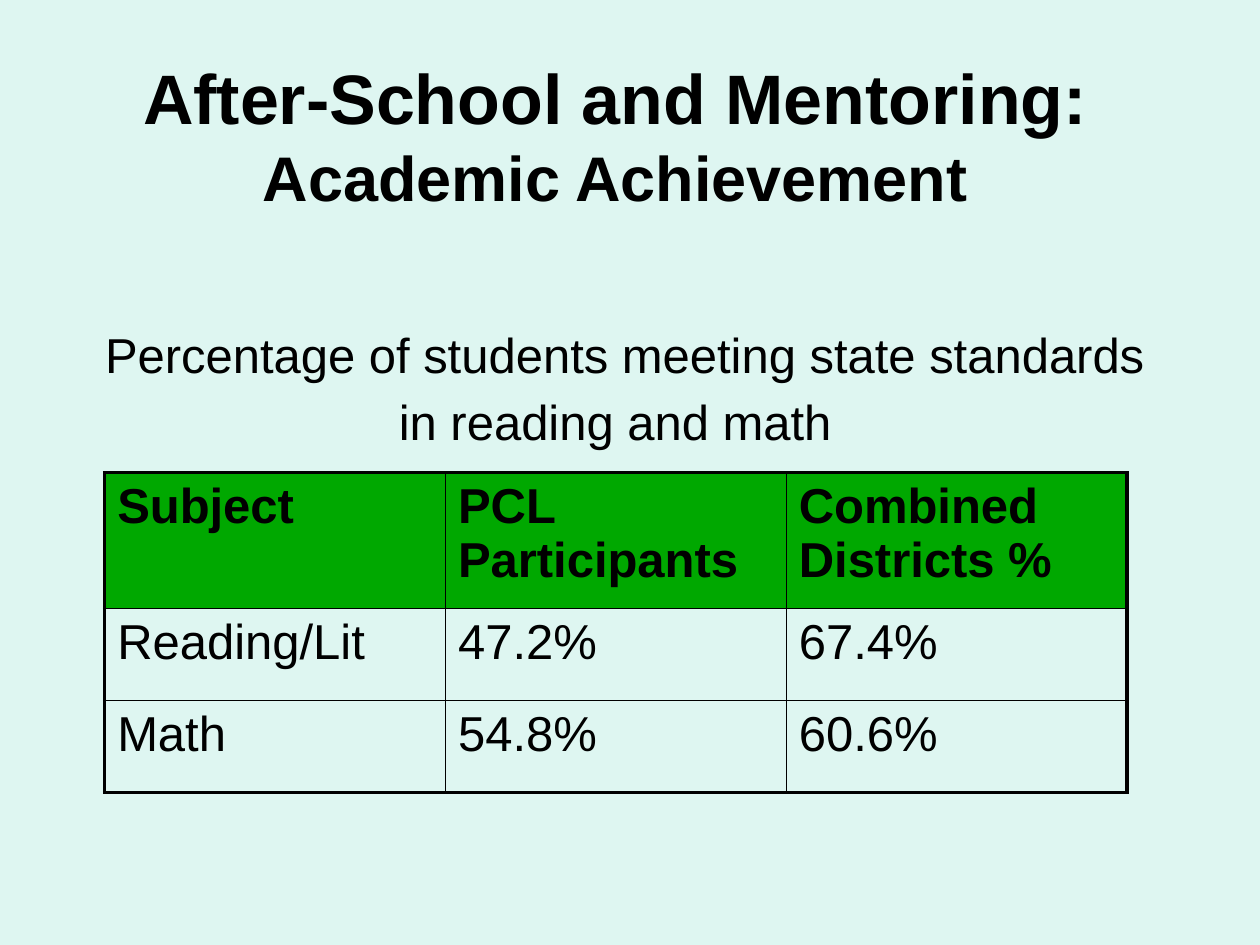
"""Build the slide on academic achievement in after-school and mentoring programs."""
from dataclasses import dataclass

from lxml.etree import SubElement
from pptx import Presentation
from pptx.dml.color import RGBColor
from pptx.enum.text import MSO_ANCHOR, MSO_AUTO_SIZE, PP_ALIGN
from pptx.oxml.ns import qn
from pptx.slide import Slide
from pptx.util import Cm, Pt

BACKGROUND, HEADER_GREEN, BLACK = "DEF6F1", "00A800", "000000"
OUTER_WIDTH, INNER_WIDTH = 2.25, 1


@dataclass(frozen=True)
class TitleLine:
    """One paragraph of the title."""
    text: str
    size: float
    bold: bool = True
    gap: float = 0
    spacing: float = 1.0
    indent: float = 0


TITLE = (
    TitleLine("After-School and Mentoring:", 40),
    TitleLine("Academic Achievement", 36),
    TitleLine("Percentage of students meeting state standards in reading and math",
              28, bold=False, gap=58, spacing=1.14, indent=0.38),
)
RESULTS = (
    ("Subject", "PCL Participants", "Combined Districts %"),
    ("Reading/Lit", "47.2%", "67.4%"),
    ("Math", "54.8%", "60.6%"),
)
ROW_HEIGHTS = (2.74, 1.85, 1.85)
COLUMN_WIDTH = 6.87


def color(code: str) -> RGBColor:
    """Turn a hex string into a colour."""
    return RGBColor.from_string(code)


def write(paragraph, text: str, *, size: float = 28, bold: bool = False,
          align=PP_ALIGN.LEFT, gap: float = 0, spacing: float = 1.0) -> None:
    """Write formatted text into a paragraph."""
    paragraph.alignment = align
    paragraph.space_before = Pt(gap)
    paragraph.line_spacing = spacing
    run = paragraph.add_run()
    run.text = text
    run.font.name = "Arial"
    run.font.size = Pt(size)
    run.font.bold = bold
    run.font.color.rgb = color(BLACK)


def add_border(cell, side: str, width: float) -> None:
    """Add a black border to one side of a cell."""
    line = SubElement(cell._tc.get_or_add_tcPr(), qn(f"a:{side}"), w=str(Pt(width)))
    SubElement(SubElement(line, qn("a:solidFill")), qn("a:srgbClr"), val=BLACK)


def draw_title(slide: Slide) -> None:
    """Fill the title placeholder."""
    title = slide.shapes.title
    title.left, title.top, title.width, title.height = Cm(1.07), Cm(1.07), Cm(22.66), Cm(7.82)
    frame = title.text_frame
    frame.word_wrap = True
    frame.auto_size = MSO_AUTO_SIZE.NONE
    frame.vertical_anchor = MSO_ANCHOR.MIDDLE
    frame.margin_top = Cm(0.35)
    for index, line in enumerate(TITLE):
        paragraph = frame.add_paragraph() if index else frame.paragraphs[0]
        write(paragraph, line.text, size=line.size, bold=line.bold, align=PP_ALIGN.CENTER,
              gap=line.gap, spacing=line.spacing)
        paragraph._p.get_or_add_pPr().set("indent", str(Cm(line.indent)))


def draw_results(slide: Slide) -> None:
    """Draw the table of results with a heavy outer frame."""
    row_count, column_count = len(RESULTS), len(RESULTS[0])
    table = slide.shapes.add_table(row_count, column_count, Cm(2.11), Cm(9.53),
                                   Cm(COLUMN_WIDTH * column_count), Cm(sum(ROW_HEIGHTS))).table
    table.horz_banding = False
    table.first_row = False
    for column in table.columns:
        column.width = Cm(COLUMN_WIDTH)
    for row_index, (row, height) in enumerate(zip(RESULTS, ROW_HEIGHTS)):
        table.rows[row_index].height = Cm(height)
        for column_index, text in enumerate(row):
            cell = table.cell(row_index, column_index)
            write(cell.text_frame.paragraphs[0], text, bold=row_index == 0)
            outer_sides = {
                "lnL": column_index == 0,
                "lnR": column_index == column_count - 1,
                "lnT": row_index == 0,
                "lnB": row_index == row_count - 1,
            }
            for side, is_outer in outer_sides.items():
                add_border(cell, side, OUTER_WIDTH if is_outer else INNER_WIDTH)
            if row_index == 0:
                cell.fill.solid()
                cell.fill.fore_color.rgb = color(HEADER_GREEN)
            else:
                cell.fill.background()


def main() -> None:
    """Build and save the presentation."""
    presentation = Presentation()
    presentation.slide_width, presentation.slide_height = Cm(25.4), Cm(19.05)
    slide = presentation.slides.add_slide(presentation.slide_layouts[5])
    slide.background.fill.solid()
    slide.background.fill.fore_color.rgb = color(BACKGROUND)
    draw_title(slide)
    draw_results(slide)
    presentation.save("out.pptx")


if __name__ == "__main__":
    main()
